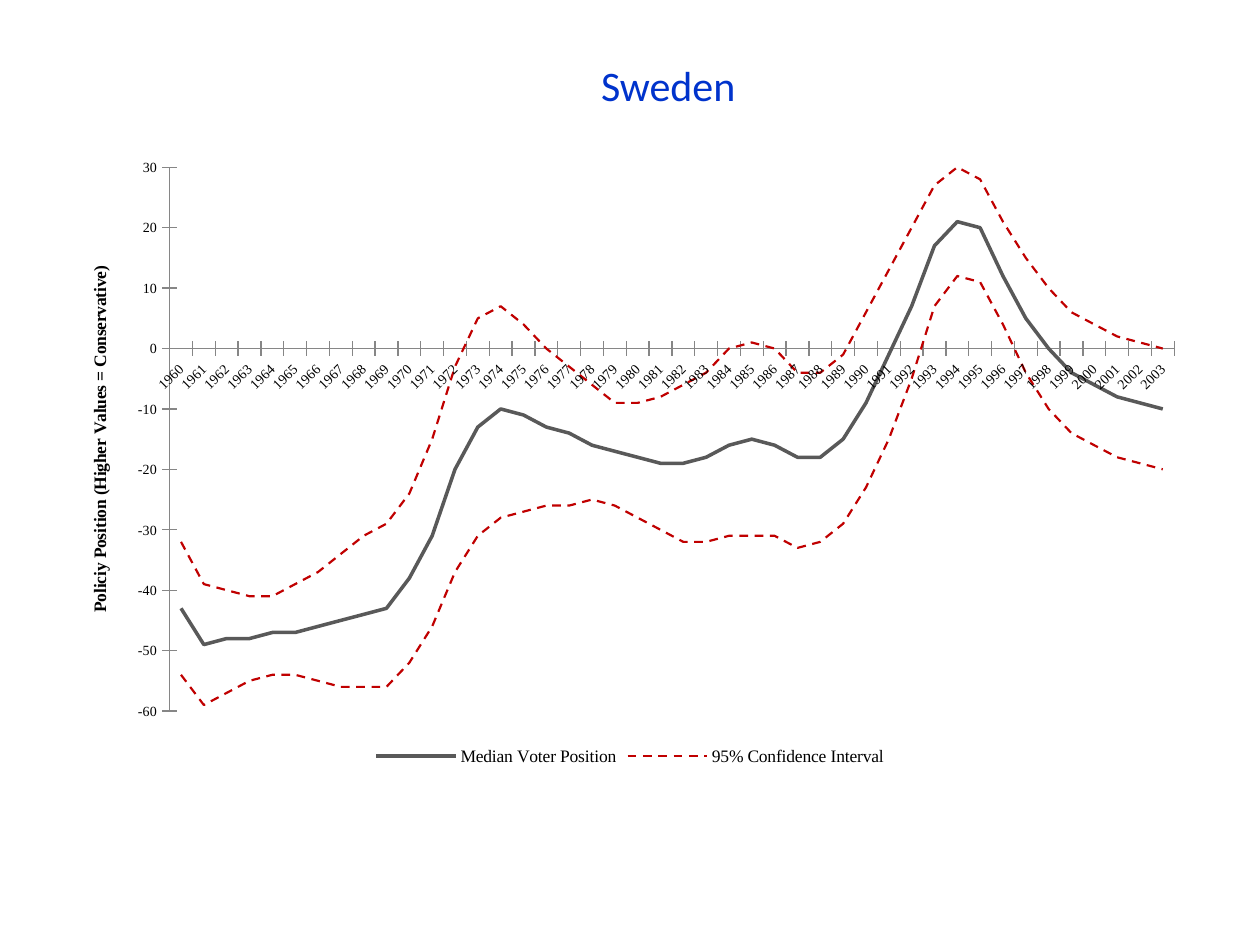
from lxml.etree import SubElement
from pptx import Presentation
from pptx.chart.data import CategoryChartData
from pptx.dml.color import RGBColor
from pptx.enum.chart import XL_CHART_TYPE, XL_LEGEND_POSITION, XL_TICK_MARK
from pptx.enum.dml import MSO_LINE
from pptx.enum.text import MSO_ANCHOR, MSO_AUTO_SIZE, PP_ALIGN
from pptx.oxml.ns import qn
from pptx.util import Pt

YEARS = [str(year) for year in range(1960, 2004)]
MEDIAN = [-43, -49, -48, -48, -47, -47, -46, -45, -44, -43, -38,
          -31, -20, -13, -10, -11, -13, -14, -16, -17, -18, -19,
          -19, -18, -16, -15, -16, -18, -18, -15, -9, -1, 7,
          17, 21, 20, 12, 5, 0, -4, -6, -8, -9, -10]
LOWER = [-54, -59, -57, -55, -54, -54, -55, -56, -56, -56, -52,
         -46, -37, -31, -28, -27, -26, -26, -25, -26, -28, -30,
         -32, -32, -31, -31, -31, -33, -32, -29, -23, -15, -5,
         7, 12, 11, 4, -4, -10, -14, -16, -18, -19, -20]
UPPER = [-32, -39, -40, -41, -41, -39, -37, -34, -31, -29, -24,
         -15, -3, 5, 7, 4, 0, -3, -6, -9, -9, -8,
         -6, -4, 0, 1, 0, -4, -4, -1, 6, 13, 20,
         27, 30, 28, 21, 15, 10, 6, 4, 2, 1, 0]
SERIES = [
    ("Median Voter Position", MEDIAN, "595959", 2, None),
    ("95% Confidence Interval", LOWER, "C00000", 1.25, MSO_LINE.DASH),
    ("Series 3", UPPER, "C00000", 1.25, MSO_LINE.DASH),
]


def color(value):
    return RGBColor.from_string(value)


def format_font(font, size, fill="000000", name="Times New Roman", bold=False):
    font.size, font.name, font.bold = Pt(size), name, bold
    font.color.rgb = color(fill)


def write_text(frame, text, **style):
    para = frame.paragraphs[0]
    span = para.add_run()
    span.text = text
    format_font(span.font, **style)
    return para


def format_line(line, fill, width, dash=None):
    line.color.rgb = color(fill)
    line.width = Pt(width)
    if dash:
        line.dash_style = dash


class SlideBuilder:
    """Hold the chart style and the current slide."""

    axis_color = "868686"
    label_size = 8
    text_size = 10

    def __init__(self, deck):
        self.page = deck.slides.add_slide(deck.slide_layouts[5])

    def add_title(self, text, left, top, width, height):
        box = self.page.shapes.title
        box.left, box.top, box.width, box.height = map(Pt, (left, top, width, height))
        frame = box.text_frame
        frame.word_wrap = False
        frame.auto_size = MSO_AUTO_SIZE.SHAPE_TO_FIT_TEXT
        frame.vertical_anchor = MSO_ANCHOR.TOP
        para = write_text(frame, text, size=24, fill="0033CC", name="Calibri")
        para.alignment = PP_ALIGN.LEFT

    def add_line_chart(self, left, top, width, height):
        data = CategoryChartData(number_format="0")
        data.categories = YEARS
        for name, values, *_ in SERIES:
            data.add_series(name, values)
        chart = self.page.shapes.add_chart(
            XL_CHART_TYPE.LINE, *map(Pt, (left, top, width, height)), data).chart
        format_font(chart.font, self.text_size)
        chart.has_title = False
        chart.plots[0].vary_by_categories = False
        for series, (_, _, fill, line_width, dash) in zip(chart.plots[0].series, SERIES):
            series.smooth = False
            format_line(series.format.line, fill, line_width, dash)
        return chart

    def format_axes(self, chart, title):
        for axis in (chart.category_axis, chart.value_axis):
            axis.major_tick_mark = XL_TICK_MARK.CROSS
            axis.minor_tick_mark = XL_TICK_MARK.NONE
            format_line(axis.format.line, self.axis_color, 0.75)
            format_font(axis.tick_labels.font, self.label_size)
        labels = chart.category_axis._element.find(qn("c:txPr"))
        labels.find(qn("a:bodyPr")).set("rot", "-2700000")
        axis = chart.value_axis
        axis.minimum_scale, axis.maximum_scale, axis.major_unit = -60, 30, 10
        format_line(axis.major_gridlines.format.line, "FFFFFF", 0.75)
        write_text(axis.axis_title.text_frame, title, size=self.text_size, bold=True)

    def place_plot(self, chart, **fractions):
        area = chart._chartSpace.chart.plotArea
        for layout in area.findall(qn("c:layout")):
            area.remove(layout)
        layout = SubElement(area, qn("c:layout"))
        area.insert(0, layout)
        manual = SubElement(layout, qn("c:manualLayout"))
        settings = {"layoutTarget": "inner", "xMode": "edge", "yMode": "edge", **fractions}
        for tag, value in settings.items():
            SubElement(manual, qn(f"c:{tag}")).set("val", str(value))

    def add_legend(self, chart, hidden):
        chart.has_legend = True
        legend = chart.legend
        legend.position = XL_LEGEND_POSITION.BOTTOM
        legend.include_in_layout = False
        format_font(legend.font, self.text_size)
        entry = SubElement(legend._element, qn("c:legendEntry"))
        SubElement(entry, qn("c:idx")).set("val", str(hidden))
        SubElement(entry, qn("c:delete")).set("val", "1")
        legend._element.find(qn("c:legendPos")).addnext(entry)


def main():
    deck = Presentation()
    deck.slide_width, deck.slide_height = Pt(720), Pt(540)
    builder = SlideBuilder(deck)
    builder.add_title("Sweden", 336.24, 30.24, 92.16, 36.72)
    chart = builder.add_line_chart(36, 84.24, 648, 356.4)
    builder.format_axes(chart, "Policiy Position (Higher Values = Conservative)")
    builder.place_plot(chart, x=0.094, y=0.032, w=0.886, h=0.872)
    builder.add_legend(chart, hidden=2)
    deck.save("out.pptx")


if __name__ == "__main__":
    main()
